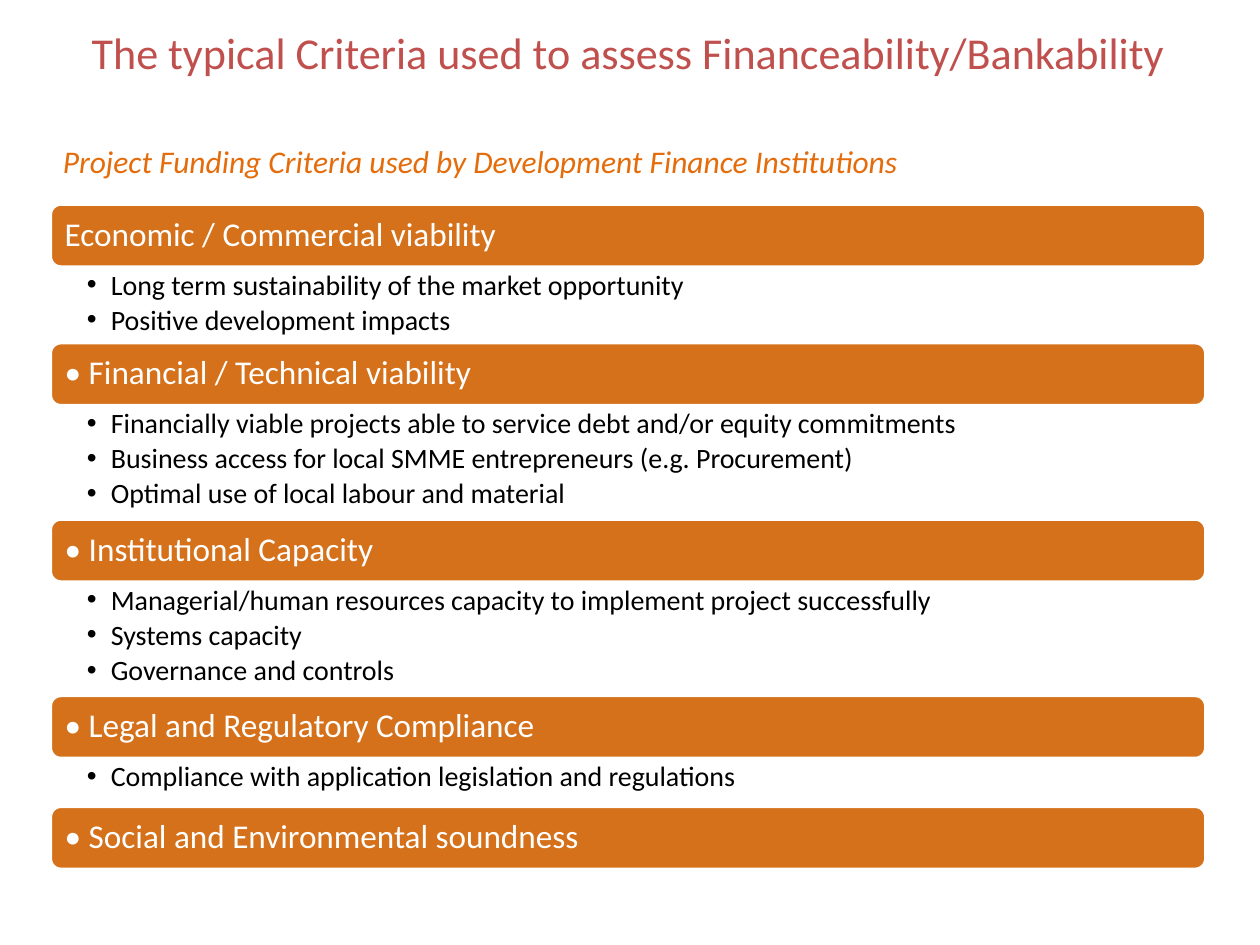
from lxml import etree
from pptx import Presentation
from pptx.dml.color import RGBColor
from pptx.enum.shapes import MSO_SHAPE as Shape
from pptx.enum.text import MSO_ANCHOR as Anchor, PP_ALIGN as Align
from pptx.oxml.ns import qn
from pptx.util import Inches, Pt

COLORS = {"title": "C0504D", "subtitle": "E46C0A", "bar": "D4711A",
          "white": "FFFFFF", "black": "000000"}
LEFT, WIDTH, BAR_HEIGHT = 0.4, 9.17, 0.5

# Heading, height of the list below it, list items
CRITERIA = [
    ("Economic / Commercial viability", 0.6,
     ["Long term sustainability of the market opportunity",
      "Positive development impacts"]),
    ("• Financial / Technical viability", 0.9,
     ["Financially viable projects able to service debt and/or equity commitments",
      "Business access for local SMME entrepreneurs (e.g. Procurement)",
      "Optimal use of local labour and material"]),
    ("• Institutional Capacity", 0.9,
     ["Managerial/human resources capacity to implement project successfully",
      "Systems capacity",
      "Governance and controls"]),
    ("• Legal and Regulatory Compliance", 0.38,
     ["Compliance with application legislation and regulations"]),
    ("• Social and Environmental soundness", 0, []),
]


def add_text_box(top, height, margins):
    """Add a full-width text box; margins are left, top, right, bottom."""
    box = page.shapes.add_textbox(Inches(LEFT), Inches(top), Inches(WIDTH), Inches(height))
    frame = box.text_frame
    frame.word_wrap = True
    (frame.margin_left, frame.margin_top,
     frame.margin_right, frame.margin_bottom) = [Inches(m) for m in margins]
    return frame


def add_span(para, text, size, color, italic=None):
    span = para.add_run()
    span.text = text
    span.font.name = "Calibri"
    span.font.size = Pt(size)
    span.font.italic = italic
    span.font.color.rgb = RGBColor.from_string(COLORS[color])


deck = Presentation()
deck.slide_width, deck.slide_height = Inches(10), Inches(7.5)
page = deck.slides.add_slide(deck.slide_layouts[6])

subtitle = add_text_box(1.08, 0.45, (0.1, 0.05, 0.1, 0.05)).paragraphs[0]
add_span(subtitle, "Project Funding Criteria used by Development Finance Institutions",
         18, "subtitle", italic=True)

title = add_text_box(0.2, 0.89, (0, 0, 0, 0)).paragraphs[0]
title.alignment = Align.CENTER
add_span(title, "The typical Criteria used to assess Financeability/Bankability",
         25.2, "title")

top = 1.62
for heading, list_height, items in CRITERIA:
    bar = page.shapes.add_shape(Shape.ROUNDED_RECTANGLE, Inches(LEFT), Inches(top),
                                Inches(WIDTH), Inches(BAR_HEIGHT))
    bar.shadow.inherit = False
    bar.fill.solid()
    bar.fill.fore_color.rgb = RGBColor.from_string(COLORS["bar"])
    bar.line.color.rgb = RGBColor.from_string(COLORS["white"])
    bar.line.width = Pt(2)
    frame = bar.text_frame
    frame.vertical_anchor = Anchor.MIDDLE
    frame.margin_left = frame.margin_right = Inches(0.09)
    para = frame.paragraphs[0]
    para.alignment = Align.LEFT
    para.line_spacing = 0.9
    add_span(para, heading, 19, "white")
    top += BAR_HEIGHT

    if items:
        frame = add_text_box(top, list_height, (0.29, 0.03, 0.16, 0.03))
        for index, item in enumerate(items):
            para = frame.add_paragraph() if index else frame.paragraphs[0]
            para.level = 1
            para.line_spacing = 0.9
            para.space_after = Pt(2.8)
            props = para._p.get_or_add_pPr()
            props.set("marL", str(Inches(0.19)))
            props.set("indent", str(Inches(-0.19)))
            etree.SubElement(props, qn("a:buFont")).set("typeface", "Arial")
            etree.SubElement(props, qn("a:buChar")).set("char", "•")
            add_span(para, item, 16, "black")
    top += list_height

deck.save("out.pptx")
